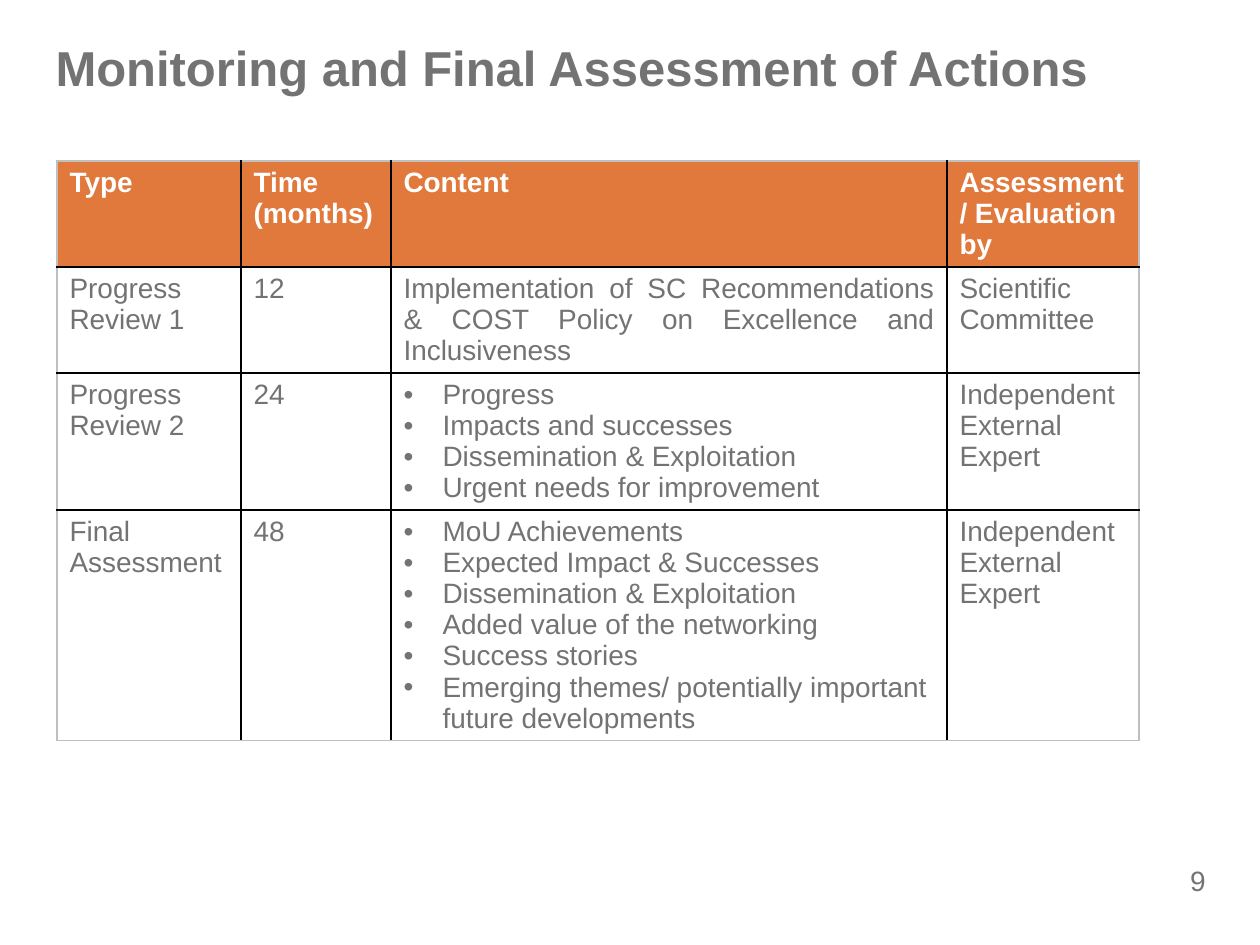
from lxml import etree
from pptx import Presentation
from pptx.dml.color import RGBColor
from pptx.enum.text import MSO_ANCHOR, MSO_AUTO_SIZE, PP_ALIGN
from pptx.oxml.ns import qn
from pptx.util import Emu, Pt

LEFT, RIGHT, JUSTIFY = PP_ALIGN.LEFT, PP_ALIGN.RIGHT, PP_ALIGN.JUSTIFY
TOP = MSO_ANCHOR.TOP
NO_AUTOFIT = MSO_AUTO_SIZE.NONE

FONT = "Arial"
COLOURS = {"text": "737373", "header": "E1783C", "white": "FFFFFF",
           "inner": "000000", "outer": "BFBFBF"}

TITLE = "Monitoring and Final Assessment of Actions"
PAGE_NUMBER = "9"
HEADINGS = ["Type", "Time (months)", "Content", "Assessment/ Evaluation by"]
REVIEWS = [
    ["Progress Review 1", "12",
     "Implementation of SC Recommendations & COST Policy on Excellence and Inclusiveness",
     "Scientific Committee"],
    ["Progress Review 2", "24",
     ["Progress", "Impacts and successes", "Dissemination & Exploitation",
      "Urgent needs for improvement"],
     "Independent External Expert"],
    ["Final Assessment", "48",
     ["MoU Achievements", "Expected Impact & Successes", "Dissemination & Exploitation",
      "Added value of the networking", "Success stories",
      "Emerging themes/ potentially important future developments"],
     "Independent External Expert"],
]

SLIDE_SIZE = (1260, 945)
TITLE_BOX = (43, 38, 1109, 80)
NUMBER_BOX = (908, 857, 310, 47)
TABLE_ORIGIN = (57, 161)
COLUMN_WIDTHS = [184, 150, 556, 192]
ROW_HEIGHTS = [106, 106, 137, 230]
BULLET_INDENT = 39
CONTENT_COLUMN = 2


def px(length):
    return Emu(round(length * 914400 / 126))


def write(frame, text, size=16, colour="text", bold=False, align=LEFT,
          bullet=False, spacing=1.0):
    frame.word_wrap = True
    lines = text if isinstance(text, list) else [text]
    for index, line in enumerate(lines):
        paragraph = frame.paragraphs[0] if index == 0 else frame.add_paragraph()
        paragraph.text = line
        paragraph.alignment = align
        paragraph.line_spacing = spacing
        paragraph.space_before = Pt(0)
        if bullet:
            properties = paragraph._p.get_or_add_pPr()
            properties.set("marL", str(px(BULLET_INDENT)))
            properties.set("indent", str(-px(BULLET_INDENT)))
            etree.SubElement(properties, qn("a:buFont"), typeface=FONT)
            etree.SubElement(properties, qn("a:buChar"), char="•")
        font = paragraph.runs[0].font
        font.name, font.size, font.bold = FONT, Pt(size), bold
        font.color.rgb = RGBColor.from_string(COLOURS[colour])


def draw_borders(cell, outer_sides):
    properties = cell._tc.get_or_add_tcPr()
    for position, side in enumerate("LRTB"):
        line = etree.Element(qn(f"a:ln{side}"), w=str(Pt(1)))
        fill = etree.SubElement(line, qn("a:solidFill"))
        colour = COLOURS["outer" if side in outer_sides else "inner"]
        etree.SubElement(fill, qn("a:srgbClr"), val=colour)
        properties.insert(position, line)


def add_review_table(slide):
    rows = [HEADINGS] + REVIEWS
    last_row, last_column = len(rows) - 1, len(HEADINGS) - 1
    size = (sum(COLUMN_WIDTHS), sum(ROW_HEIGHTS))
    table = slide.shapes.add_table(len(rows), len(HEADINGS),
                                   *map(px, TABLE_ORIGIN + size)).table
    for column, width in zip(table.columns, COLUMN_WIDTHS):
        column.width = px(width)
    for row, height in zip(table.rows, ROW_HEIGHTS):
        row.height = px(height)
    for r, entries in enumerate(rows):
        for c, entry in enumerate(entries):
            cell = table.cell(r, c)
            header, bullet = r == 0, isinstance(entry, list)
            justified = c == CONTENT_COLUMN and not header and not bullet
            write(cell.text_frame, entry, bold=header, bullet=bullet,
                  colour="white" if header else "text",
                  align=JUSTIFY if justified else LEFT)
            cell.vertical_anchor = TOP
            cell.fill.solid()
            cell.fill.fore_color.rgb = RGBColor.from_string(
                COLOURS["header" if header else "white"])
            edges = {"L": c == 0, "R": c == last_column, "T": r == 0, "B": r == last_row}
            draw_borders(cell, [side for side, outer in edges.items() if outer])


def main():
    deck = Presentation()
    deck.slide_width, deck.slide_height = map(px, SLIDE_SIZE)
    slide = deck.slides.add_slide(deck.slide_layouts[5])

    title = slide.shapes.title
    title.left, title.top, title.width, title.height = map(px, TITLE_BOX)
    title.text_frame.auto_size = NO_AUTOFIT
    title.text_frame.vertical_anchor = TOP
    write(title.text_frame, TITLE, size=28, bold=True, spacing=0.9)

    add_review_table(slide)

    page_number = slide.shapes.add_textbox(*map(px, NUMBER_BOX))
    write(page_number.text_frame, PAGE_NUMBER, align=RIGHT)

    deck.save("out.pptx")


if __name__ == "__main__":
    main()
